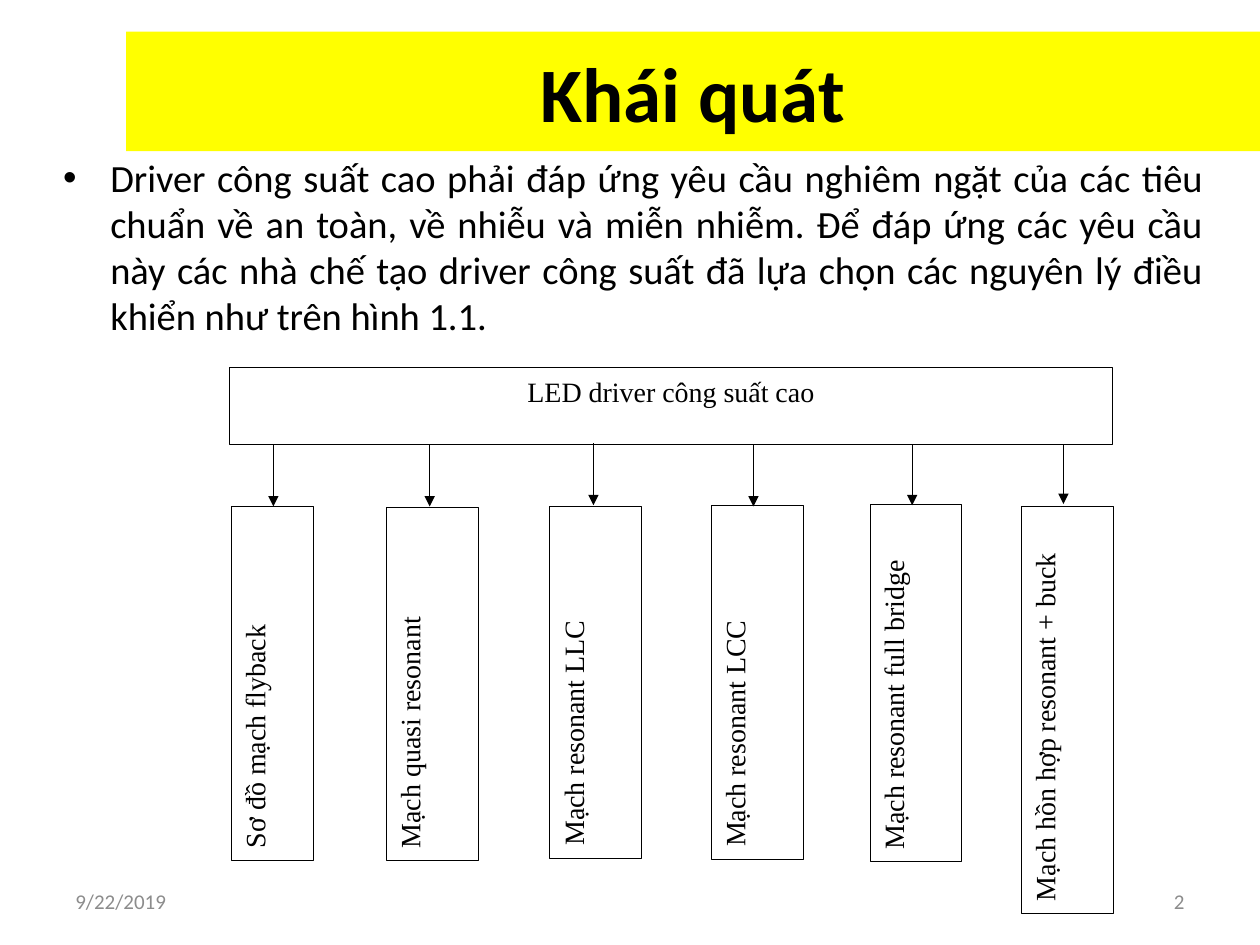
from lxml import etree
from pptx import Presentation
from pptx.dml.color import RGBColor as RGB
from pptx.enum.shapes import MSO_CONNECTOR as LINE, MSO_SHAPE as SHAPE
from pptx.enum.text import MSO_ANCHOR as ANCHOR, MSO_AUTO_SIZE as FIT, PP_ALIGN as ALIGN
from pptx.oxml.ns import qn
from pptx.util import Inches, Pt

COLORS = {"ink": "000000", "paper": "FFFFFF", "band": "FFFF00", "muted": "8C8C8C"}
color = {name: RGB.from_string(code) for name, code in COLORS.items()}


def write(shape, text, size, font="Calibri", ink="ink", align=ALIGN.LEFT, bold=False):
    """Fill the shape with one formatted paragraph and return it."""
    frame = shape.text_frame
    frame.text = text
    frame.word_wrap = True
    frame.auto_size = FIT.NONE
    para = frame.paragraphs[0]
    para.alignment = align
    face = para.runs[0].font
    face.name, face.size, face.bold = font, Pt(size), bold
    face.color.rgb = color[ink]
    return para


def add_box(x, y, w, h, text, align=ALIGN.LEFT):
    box = slide.shapes.add_shape(SHAPE.RECTANGLE, Inches(x), Inches(y), Inches(w), Inches(h))
    box.shadow.inherit = False
    box.fill.solid()
    box.fill.fore_color.rgb = color["paper"]
    box.line.color.rgb = color["ink"]
    box.line.width = Pt(0.5)
    box.text_frame.vertical_anchor = ANCHOR.TOP
    write(box, text, 16, "Times New Roman", align=align).space_before = Pt(6)
    return box


deck = Presentation()
deck.slide_width, deck.slide_height = Inches(10), Inches(7.5)
slide = deck.slides.add_slide(deck.slide_layouts[1])

# Title and body
title, body = slide.placeholders
title.left, title.top, title.width, title.height = map(Inches, (1, 0.25, 9, 0.95))
title.fill.solid()
title.fill.fore_color.rgb = color["band"]
write(title, "Khái quát", 44, align=ALIGN.CENTER, bold=True)

body.left, body.top, body.width, body.height = map(Inches, (0.4, 1.17, 9.25, 1.5))
write(body, "Driver công suất cao phải đáp ứng yêu cầu nghiêm ngặt của các tiêu chuẩn "
      "về an toàn, về nhiễu và miễn nhiễm. Để đáp ứng các yêu cầu này các nhà chế tạo "
      "driver công suất đã lựa chọn các nguyên lý điều khiển như trên hình 1.1.",
      22, align=ALIGN.JUSTIFY)

# Date and page number
for x, text, align in ((0.5, "9/22/2019", ALIGN.LEFT), (7.17, "2", ALIGN.RIGHT)):
    note = slide.shapes.add_textbox(Inches(x), Inches(6.95), Inches(2.33), Inches(0.4))
    note.text_frame.vertical_anchor = ANCHOR.MIDDLE
    write(note, text, 12, ink="muted", align=align)

# Tree: one root, six upright branches
add_box(1.82, 2.92, 7.01, 0.61, "LED driver công suất cao", ALIGN.CENTER)

# text, centre x, top, width and height as seen, arrow x, arrow start and end
branches = (
    ("Sơ đồ mạch flyback", 2.16, 4.02, 0.65, 2.81, 2.17, 3.53, 4.02),
    ("Mạch quasi resonant", 3.43, 4.03, 0.73, 2.8, 3.41, 3.53, 4.02),
    ("Mạch resonant LLC", 4.73, 4.02, 0.73, 2.79, 4.71, 3.52, 4.01),
    ("Mạch resonant LCC", 6.01, 4.01, 0.73, 2.81, 5.98, 3.53, 4.02),
    ("Mạch resonant full bridge", 7.27, 4, 0.73, 2.84, 7.24, 3.53, 4.01),
    ("Mạch hồn hợp resonant + buck", 8.47, 4.02, 0.73, 3.23, 8.44, 3.53, 4),
)
for text, mid, top, wide, tall, x, start, end in branches:
    # The box is laid flat around its centre, then turned upright
    box = add_box(mid - tall / 2, top + (tall - wide) / 2, tall, wide, text)
    box.rotation = 270

    arrow = slide.shapes.add_connector(LINE.STRAIGHT, Inches(x), Inches(start),
                                       Inches(x), Inches(end))
    arrow.line.color.rgb = color["ink"]
    arrow.line.width = Pt(0.75)
    etree.SubElement(arrow.line._get_or_add_ln(), qn("a:tailEnd"), type="triangle")
    etree.SubElement(arrow._element.spPr, qn("a:effectLst"))

deck.save("out.pptx")
